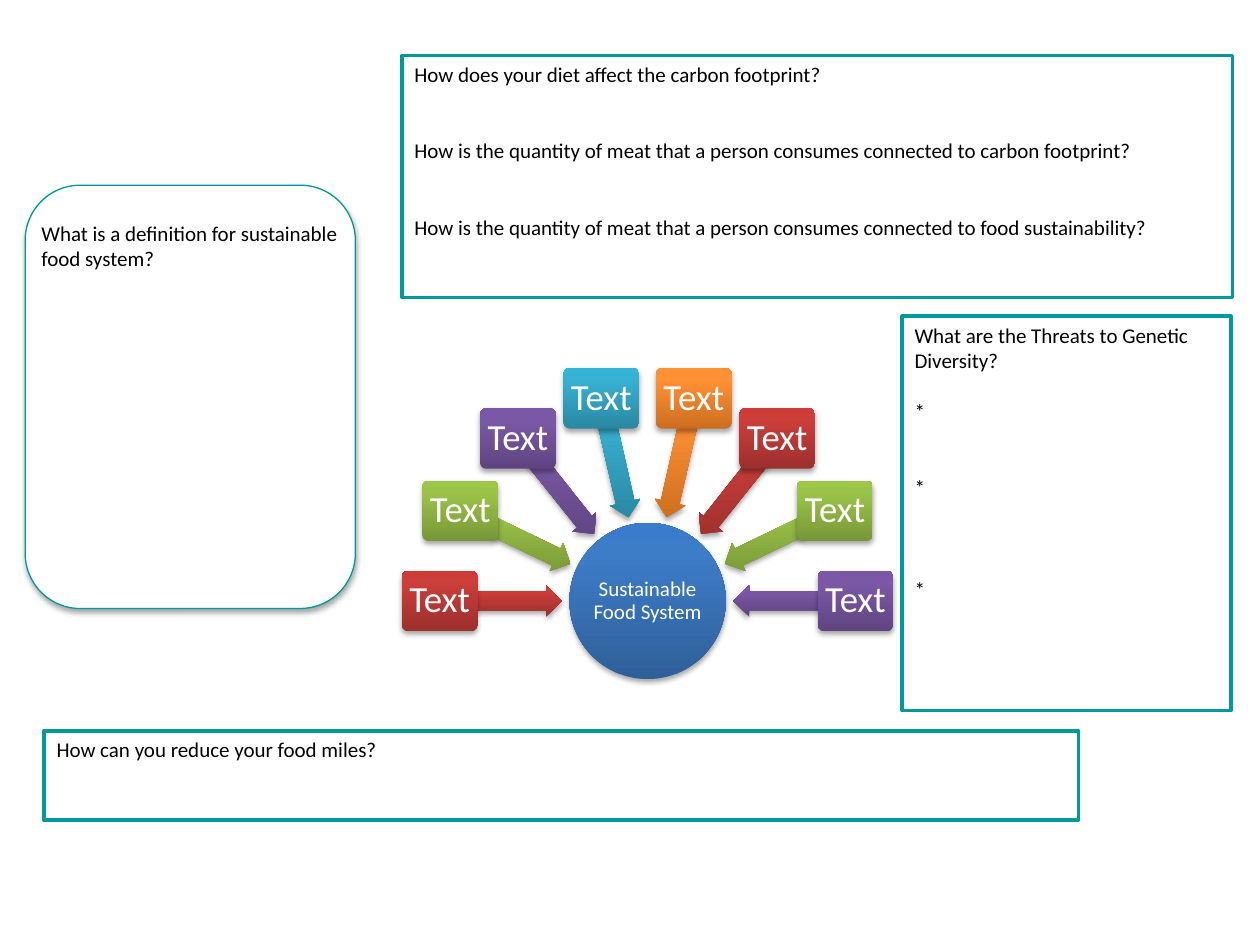
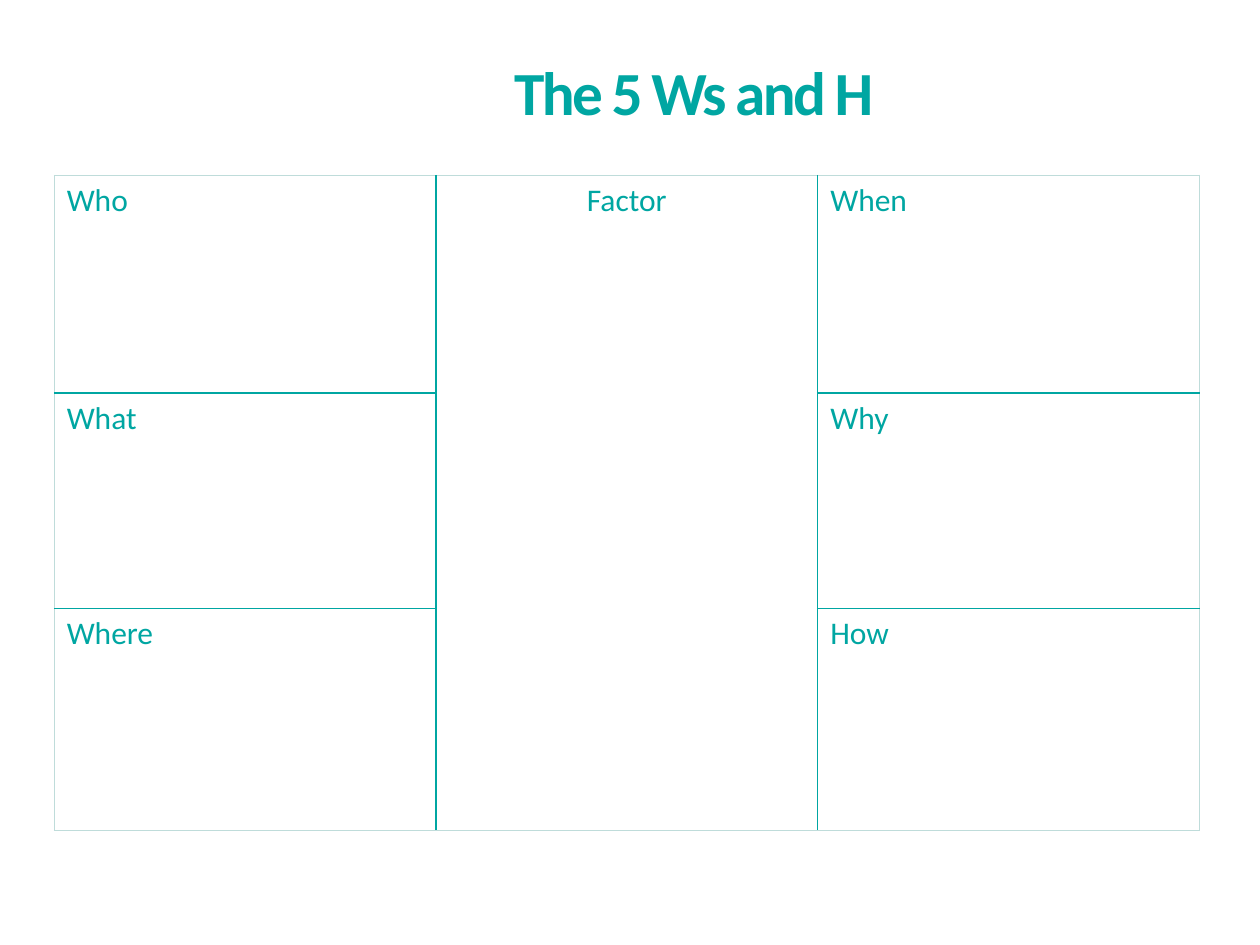
import math

import pptx
import pptx.dml.color
import pptx.enum.shapes
import pptx.enum.text
import pptx.oxml
import pptx.oxml.ns
import pptx.util

Inches = pptx.util.Inches
Pt = pptx.util.Pt
Shape = pptx.enum.shapes.MSO_SHAPE
Align = pptx.enum.text.PP_ALIGN
Anchor = pptx.enum.text.MSO_ANCHOR
qn = pptx.oxml.ns.qn

NAMESPACE = pptx.oxml.ns.nsdecls("a")
FONT = "Calibri"
COLOURS = {
    "white": "FFFFFF",
    "black": "000000",
    "frame": "009999",
    "teal": "00A6A2",
    "pale": "BFDCDA",
}
GRADIENTS = {
    "blue": ("2F5F99", "3D7CC7", "3A7CCB"),
    "red": ("9C2F2D", "CB3E3A", "CE3B37"),
    "green": ("779737", "9BC348", "9DC746"),
    "purple": ("5F4480", "7B58A6", "7C57A8"),
    "aqua": ("2A88A2", "37B1D2", "34B4D6"),
    "orange": ("CC6E20", "FF9034", "FF9136"),
}
SPOKES = ["red", "green", "purple", "aqua", "orange", "red", "green", "purple"]
HUB_X, HUB_Y, HUB_SIZE = 5.14, 4.77, 1.24
ARROW_RADIUS, CARD_RADIUS = 1.165, 1.65
LINE_HEIGHT = 14.6


class Worksheet:
    def __init__(self):
        self.deck = pptx.Presentation()
        self.deck.slide_width = Inches(10)
        self.deck.slide_height = Inches(7.5)
        self.page = None

    def colour(self, name):
        return pptx.dml.color.RGBColor.from_string(COLOURS[name])

    def add_page(self, layout):
        self.page = self.deck.slides.add_slide(
            self.deck.slide_layouts.get_by_name(layout))

    def style(self, para, size, colour, align=Align.LEFT, bold=False):
        para.alignment = align
        for span in para.runs:
            span.font.name = FONT
            span.font.size = Pt(size)
            span.font.bold = bold
            span.font.color.rgb = self.colour(colour)

    def title(self, text, left, top, width, height):
        box = self.page.shapes.title
        box.left, box.top = Inches(left), Inches(top)
        box.width, box.height = Inches(width), Inches(height)
        frame = box.text_frame
        frame.text = text
        frame.vertical_anchor = Anchor.TOP
        frame.auto_size = pptx.enum.text.MSO_AUTO_SIZE.NONE
        para = frame.paragraphs[0]
        para.line_spacing = Pt(32)
        self.style(para, 35, "teal", bold=True)
        para.runs[0].font._element.set("spc", "-150")

    def shape(self, kind, left, top, width, height):
        box = self.page.shapes.add_shape(
            kind, Inches(left), Inches(top), Inches(width), Inches(height))
        box.shadow.inherit = False
        return box

    def drop_shadow(self, box):
        effects = box._element.spPr.find(qn("a:effectLst"))
        effects.append(pptx.oxml.parse_xml(
            f'<a:outerShdw {NAMESPACE} blurRad="{Pt(3.1)}" dist="{Pt(1.8)}" '
            'dir="5400000" rotWithShape="0"><a:srgbClr val="000000">'
            '<a:alpha val="35000"/></a:srgbClr></a:outerShdw>'))

    def glossy(self, kind, centre_x, centre_y, width, height, tint, adjust=()):
        box = self.shape(
            kind, centre_x - width / 2, centre_y - height / 2, width, height)
        for index, value in enumerate(adjust):
            box.adjustments[index] = value
        box.fill.gradient()
        stops = "".join(
            f'<a:gs pos="{place}"><a:srgbClr val="{value}"/></a:gs>'
            for place, value in zip((0, 80000, 100000), GRADIENTS[tint]))
        properties = box._element.spPr
        properties.replace(
            properties.find(qn("a:gradFill")),
            pptx.oxml.parse_xml(
                f'<a:gradFill {NAMESPACE} rotWithShape="0"><a:gsLst>{stops}'
                '</a:gsLst><a:lin ang="16200000" scaled="0"/></a:gradFill>'))
        box.line.fill.background()
        self.drop_shadow(box)
        return box

    def label(self, box, text, size, margin):
        frame = box.text_frame
        frame.text = text
        frame.word_wrap = True
        frame.vertical_anchor = Anchor.MIDDLE
        frame.margin_left = frame.margin_right = Inches(margin)
        frame.margin_top = frame.margin_bottom = Inches(margin)
        para = frame.paragraphs[0]
        para.line_spacing = 0.9
        self.style(para, size, "white", Align.CENTER)

    def panel(self, kind, left, top, width, height, line):
        box = self.shape(kind, left, top, width, height)
        box.fill.solid()
        box.fill.fore_color.rgb = self.colour("white")
        box.line.color.rgb = self.colour("frame")
        box.line.width = Pt(line)
        return box

    def prompts(self, box, lines, gaps=()):
        frame = box.text_frame
        frame.text = "\n".join(lines)
        frame.word_wrap = True
        frame.vertical_anchor = Anchor.TOP
        for para in frame.paragraphs:
            self.style(para, 12, "black")
        for para, gap in zip(frame.paragraphs[1:], gaps):
            para.space_before = Pt(gap * LINE_HEIGHT)

    def question_box(self, left, top, width, height, lines, gaps=()):
        box = self.panel(Shape.RECTANGLE, left, top, width, height, 2)
        self.prompts(box, lines, gaps)

    def text(self, left, top, width, height, lines):
        box = self.page.shapes.add_textbox(
            Inches(left), Inches(top), Inches(width), Inches(height))
        self.prompts(box, lines)

    def spoke(self, index, tint):
        degrees = 180 * index / (len(SPOKES) - 1)
        across = -math.cos(math.radians(degrees))
        up = math.sin(math.radians(degrees))
        arrow = self.glossy(
            Shape.LEFT_ARROW, HUB_X + ARROW_RADIUS * across,
            HUB_Y - ARROW_RADIUS * up, 0.97, 0.25, tint, (0.6, 0.5))
        arrow.rotation = (180 + degrees) % 360
        card = self.glossy(
            Shape.ROUNDED_RECTANGLE, HUB_X + CARD_RADIUS * across,
            HUB_Y - CARD_RADIUS * up, 0.6, 0.48, tint, (0.1,))
        self.label(card, "Text", 21, 0.04)

    def border(self, cell, side, inner):
        colour, width = ("teal", 1) if inner else ("pale", 0.5)
        cell._tc.get_or_add_tcPr().append(pptx.oxml.parse_xml(
            f'<a:ln{side} {NAMESPACE} w="{Pt(width)}"><a:solidFill>'
            f'<a:srgbClr val="{COLOURS[colour]}"/></a:solidFill></a:ln{side}>'))

    def grid(self, left, top, columns, heights, rows):
        table = self.page.shapes.add_table(
            len(rows), len(columns), Inches(left), Inches(top),
            Inches(sum(columns)), Inches(sum(heights))).table
        table.first_row = table.horz_banding = False
        for column, width in zip(table.columns, columns):
            column.width = Inches(width)
        for row, height in zip(table.rows, heights):
            row.height = Inches(height)
        last_row, last_column = len(rows) - 1, len(columns) - 1
        for r, row in enumerate(rows):
            for c, text in enumerate(row):
                cell = table.cell(r, c)
                self.border(cell, "L", c > 0)
                self.border(cell, "R", c < last_column)
                self.border(cell, "T", r > 0)
                self.border(cell, "B", r < last_row and c != 1)
                cell.fill.background()
                if text:
                    cell.text = text
                    self.style(cell.text_frame.paragraphs[0], 18, "teal",
                               Align.CENTER if c == 1 else Align.LEFT)
        table.cell(0, 1).merge(table.cell(last_row, 1))


def food_system_page(sheet):
    sheet.add_page("Blank")
    hub = sheet.glossy(Shape.OVAL, HUB_X, HUB_Y, HUB_SIZE, HUB_SIZE, "blue")
    sheet.label(hub, "Sustainable Food System", 12, 0.01)
    for index, tint in enumerate(SPOKES):
        sheet.spoke(index, tint)
    definition = sheet.panel(
        Shape.ROUNDED_RECTANGLE, 0.2, 1.47, 2.62, 3.36, 0.75)
    sheet.drop_shadow(definition)
    sheet.question_box(3.19, 0.44, 6.59, 1.92, [
        "How does your diet affect the carbon footprint?",
        "How is the quantity of meat that a person consumes connected to carbon footprint?",
        "How is the quantity of meat that a person consumes connected to food sustainability?",
    ], (2, 2))
    sheet.question_box(0.35, 5.8, 8.21, 0.71,
                       ["How can you reduce your food miles?"])
    sheet.text(0.23, 1.7, 2.62, 0.5,
               ["What is a definition for sustainable food system?"])
    sheet.question_box(
        7.16, 2.51, 2.61, 3.13,
        ["What are the Threats to Genetic Diversity?", "*", "*", "*"],
        (1, 2, 3))


def five_ws_page(sheet):
    sheet.add_page("Title Only")
    sheet.title("The 5 Ws and H", 3.98, 0.52, 5.5, 0.47)
    sheet.grid(0.43, 1.39, [3.03] * 3, [1.73, 1.71, 1.76], [
        ["Who", "Factor", "When"],
        ["What", "", "Why"],
        ["Where", "", "How"],
    ])


def main():
    sheet = Worksheet()
    food_system_page(sheet)
    five_ws_page(sheet)
    sheet.deck.save("out.pptx")


if __name__ == "__main__":
    main()
